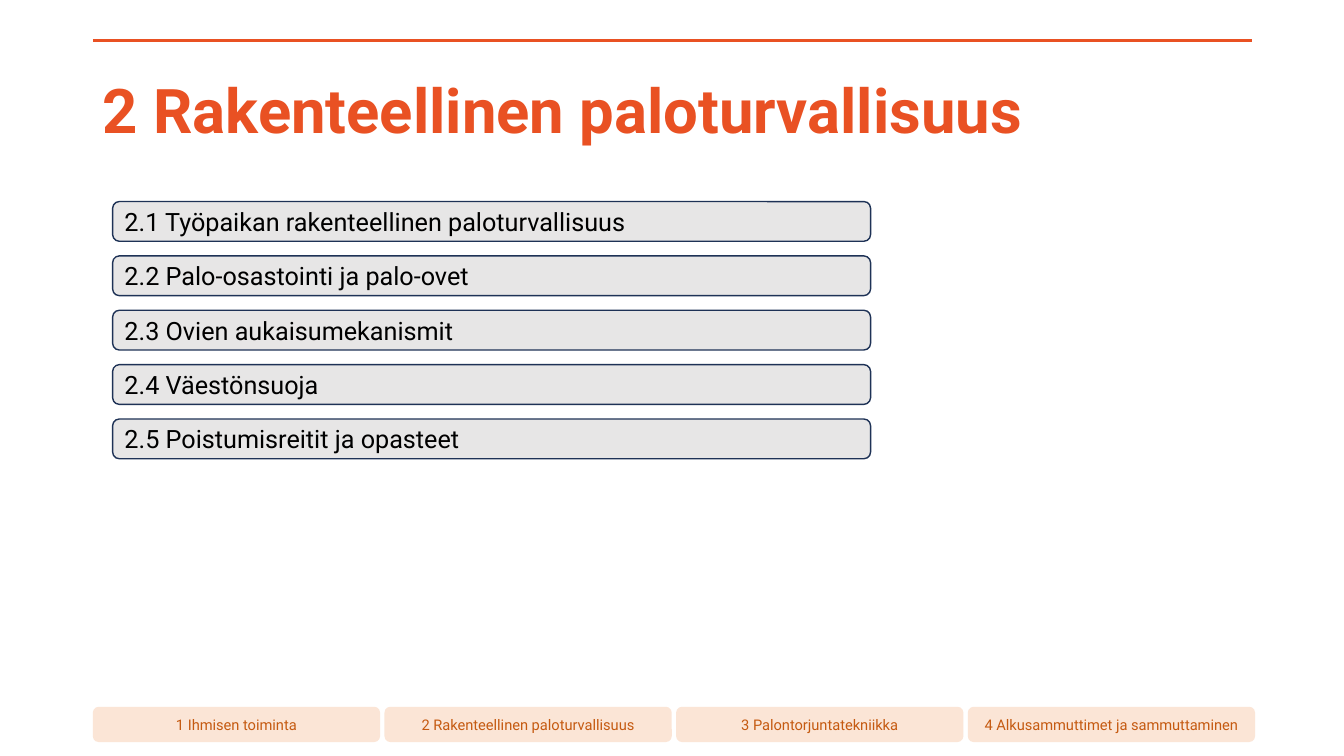
import dataclasses

import pptx
import pptx.dml.color
import pptx.enum.shapes
import pptx.enum.text
import pptx.oxml.ns
import pptx.util
from lxml import etree
from pptx.util import Cm


@dataclasses.dataclass(frozen=True)
class Theme:
    font: str = "Roboto"
    orange: str = "E95123"
    rust: str = "C55A11"
    peach: str = "FBE5D6"
    grey: str = "E7E6E6"
    navy: str = "1E3256"
    black: str = "000000"
    title_size: float = 44
    topic_size: float = 18
    chapter_size: float = 10.5


theme = Theme()
align = pptx.enum.text.PP_ALIGN


def rgb(value):
    return pptx.dml.color.RGBColor.from_string(value)


def write(shape, text, *, size, color, bold=False, alignment=align.LEFT, spacing=1.0):
    frame = shape.text_frame
    frame.word_wrap = True
    frame.auto_size = pptx.enum.text.MSO_AUTO_SIZE.NONE
    frame.vertical_anchor = pptx.enum.text.MSO_ANCHOR.MIDDLE
    para = frame.paragraphs[0]
    para.alignment = alignment
    para.line_spacing = spacing
    span = para.add_run()
    span.text = text
    span.font.name = theme.font
    span.font.size = pptx.util.Pt(size)
    span.font.bold = bold
    span.font.color.rgb = rgb(color)


deck = pptx.Presentation()
deck.slide_width = Cm(33.87)
deck.slide_height = Cm(19.05)
page = deck.slides.add_slide(deck.slide_layouts.get_by_name("Title Only"))

left = 2.34
rule = page.shapes.add_connector(
    pptx.enum.shapes.MSO_CONNECTOR.STRAIGHT, Cm(left), Cm(1.02), Cm(31.55), Cm(1.02)
)
rule.line.color.rgb = rgb(theme.orange)
rule.line.width = pptx.util.Pt(2.5)
etree.SubElement(rule.element.spPr, pptx.oxml.ns.qn("a:effectLst"))

title = page.shapes.title
title.left, title.top, title.width, title.height = Cm(left), Cm(1.02), Cm(29.21), Cm(3.68)
write(title, "2 Rakenteellinen paloturvallisuus", size=theme.title_size,
      color=theme.orange, bold=True, spacing=0.9)

topics = [
    "2.1 Työpaikan rakenteellinen paloturvallisuus",
    "2.2 Palo-osastointi ja palo-ovet",
    "2.3 Ovien aukaisumekanismit",
    "2.4 Väestönsuoja",
    "2.5 Poistumisreitit ja opasteet",
]
chapters = [
    "1 Ihmisen toiminta",
    "2 Rakenteellinen paloturvallisuus",
    "3 Palontorjuntatekniikka",
    "4 Alkusammuttimet ja sammuttaminen",
]
topic_format = dict(size=theme.topic_size, color=theme.black)
chapter_format = dict(size=theme.chapter_size, color=theme.rust, alignment=align.CENTER)

buttons = [
    (text, (2.84, 5.08 + 1.37 * row, 19.1, 1), theme.grey, theme.navy, topic_format)
    for row, text in enumerate(topics)
] + [
    (text, (left + 7.35 * column, 17.81, 7.24, 0.89), theme.peach, None, chapter_format)
    for column, text in enumerate(chapters)
]

for text, place, fill, outline, text_format in buttons:
    box = page.shapes.add_shape(
        pptx.enum.shapes.MSO_SHAPE.ROUNDED_RECTANGLE, *[Cm(length) for length in place]
    )
    box.shadow.inherit = False
    box.fill.solid()
    box.fill.fore_color.rgb = rgb(fill)
    if outline:
        box.line.color.rgb = rgb(outline)
        box.line.width = pptx.util.Pt(1)
    else:
        box.line.fill.background()
    write(box, text, **text_format)

deck.save("out.pptx")
